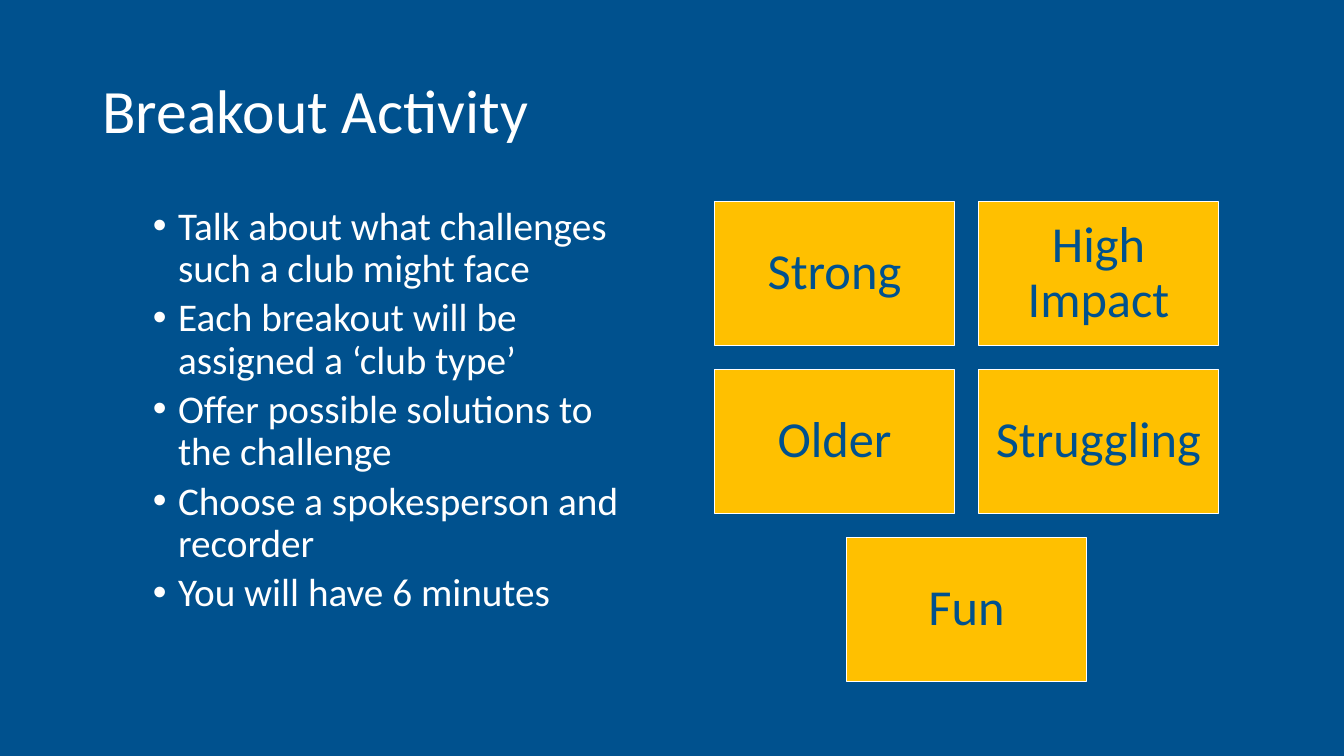
from dataclasses import dataclass

from lxml import etree
from pptx import Presentation
from pptx import util as u
from pptx.dml import color
from pptx.enum import shapes, text
from pptx.oxml import ns


@dataclass(frozen=True)
class Theme:
    font: str = "Calibri"
    blue: str = "00518E"
    gold: str = "FFC000"
    white: str = "FFFFFF"
    title_size: float = 44
    list_size: float = 28
    card_size: float = 36
    line_spacing: float = 0.9


CHALLENGES = [
    "Talk about what challenges such a club might face",
    "Each breakout will be assigned a ‘club type’",
    "Offer possible solutions to the challenge",
    "Choose a spokesperson and recorder",
    "You will have 6 minutes",
]
CLUB_TYPES = [["Strong", "High Impact"], ["Older", "Struggling"], ["Fun"]]

GRID_LEFT, GRID_TOP, GRID_WIDTH = 510.4, 144, 360
CARD_WIDTH, CARD_HEIGHT, CARD_GAP = 171.43, 102.86, 17.14


def rgb(value):
    return color.RGBColor.from_string(value)


class SlideBuilder:
    def __init__(self, page, theme):
        self.page = page
        self.theme = theme
        page.background.fill.solid()
        page.background.fill.fore_color.rgb = rgb(theme.blue)

    def place(self, box, left, top, width, height):
        box.left, box.top = u.Pt(left), u.Pt(top)
        box.width, box.height = u.Pt(width), u.Pt(height)

    def format_paragraph(self, para, size, ink, align):
        para.alignment = align
        para.line_spacing = self.theme.line_spacing
        for span in para.runs:
            span.font.name = self.theme.font
            span.font.size = u.Pt(size)
            span.font.color.rgb = rgb(ink)

    def title(self, words, *bounds):
        box = self.page.shapes.title
        self.place(box, *bounds)
        frame = box.text_frame
        frame.text = words
        frame.auto_size = text.MSO_AUTO_SIZE.NONE
        frame.vertical_anchor = text.MSO_ANCHOR.MIDDLE
        self.format_paragraph(frame.paragraphs[0], self.theme.title_size,
                              self.theme.white, text.PP_ALIGN.LEFT)

    def bullets(self, items, *bounds):
        box = self.page.placeholders[1]
        self.place(box, *bounds)
        frame = box.text_frame
        frame.text = "\n".join(items)
        frame.auto_size = text.MSO_AUTO_SIZE.NONE
        for index, para in enumerate(frame.paragraphs):
            para.level = 1
            self.add_bullet(para)
            self.format_paragraph(para, self.theme.list_size,
                                  self.theme.white, text.PP_ALIGN.LEFT)
            para.space_before = u.Pt(5 if index else 0)

    def add_bullet(self, para):
        properties = para._p.get_or_add_pPr()
        properties.set("marL", str(u.Pt(54)))
        properties.set("indent", str(u.Pt(-18)))
        etree.SubElement(properties, ns.qn("a:buFont"), typeface="Arial")
        etree.SubElement(properties, ns.qn("a:buChar"), char="•")

    def card(self, words, *bounds):
        box = self.page.shapes.add_shape(
            shapes.MSO_SHAPE.RECTANGLE, *map(u.Pt, bounds))
        box.shadow.inherit = False
        box.fill.solid()
        box.fill.fore_color.rgb = rgb(self.theme.gold)
        box.line.color.rgb = rgb(self.theme.white)
        box.line.width = u.Pt(1)
        frame = box.text_frame
        frame.text = words
        frame.word_wrap = True
        frame.vertical_anchor = text.MSO_ANCHOR.MIDDLE
        frame.margin_left = frame.margin_right = u.Pt(10.8)
        frame.margin_top = frame.margin_bottom = u.Pt(10.8)
        self.format_paragraph(frame.paragraphs[0], self.theme.card_size,
                              self.theme.blue, text.PP_ALIGN.CENTER)

    def card_grid(self, rows):
        """Stack rows of equal cards, each row centred in the grid."""
        for index, row in enumerate(rows):
            row_width = len(row) * (CARD_WIDTH + CARD_GAP) - CARD_GAP
            left = GRID_LEFT + (GRID_WIDTH - row_width) / 2
            top = GRID_TOP + index * (CARD_HEIGHT + CARD_GAP)
            for column, words in enumerate(row):
                self.card(words, left + column * (CARD_WIDTH + CARD_GAP), top,
                          CARD_WIDTH, CARD_HEIGHT)


def main():
    deck = Presentation()
    deck.slide_width, deck.slide_height = u.Pt(960), u.Pt(540)
    page = deck.slides.add_slide(deck.slide_layouts[1])
    builder = SlideBuilder(page, Theme())
    builder.title("Breakout Activity", 66, 28.75, 828, 104.4)
    builder.bullets(CHALLENGES, 66, 143.75, 408, 342.6)
    builder.card_grid(CLUB_TYPES)
    deck.save("out.pptx")


if __name__ == "__main__":
    main()
